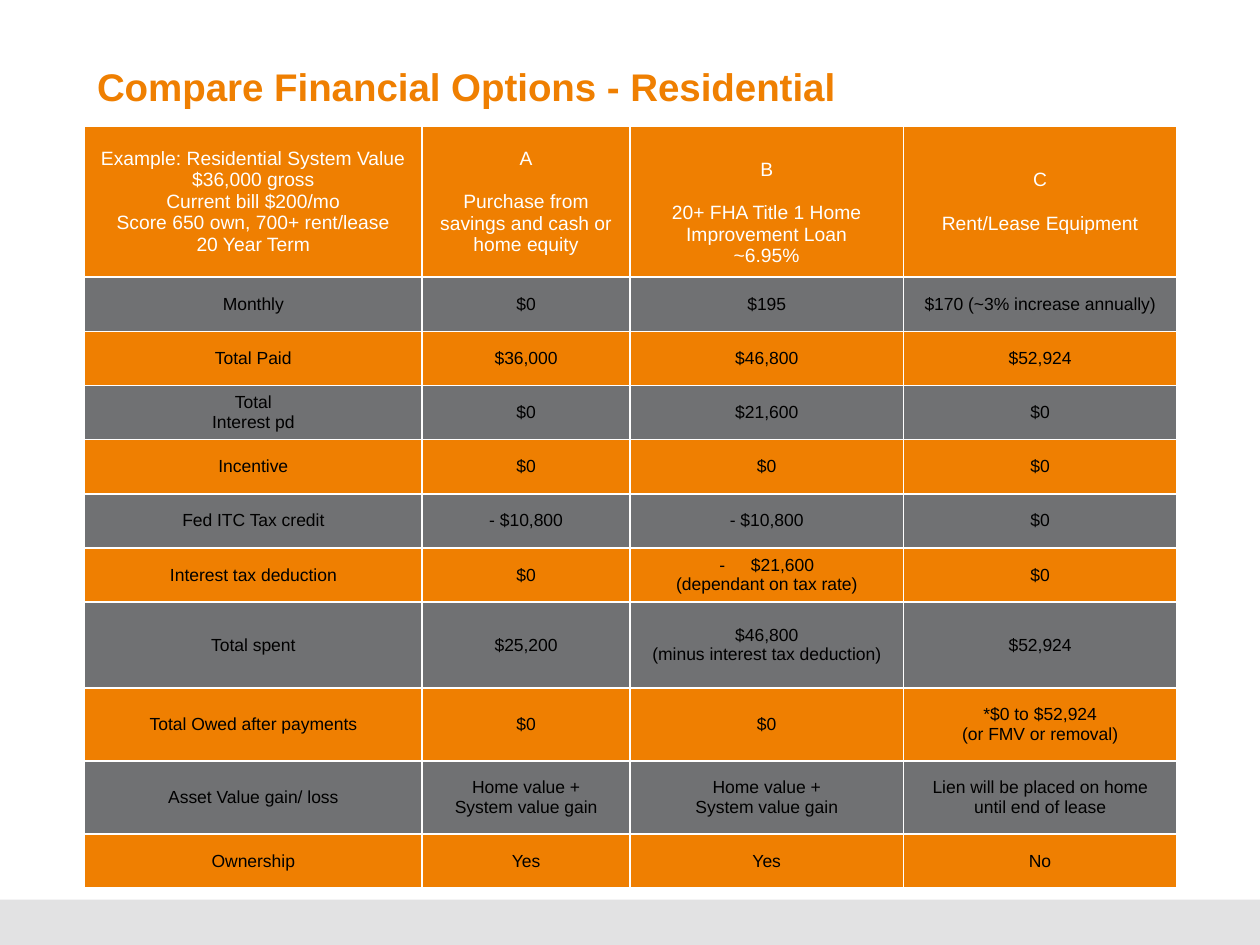
from dataclasses import dataclass

from lxml.etree import SubElement
from pptx import Presentation
from pptx.dml.color import RGBColor as Rgb
from pptx.enum.shapes import MSO_SHAPE as Preset
from pptx.enum.text import MSO_ANCHOR as Anchor, MSO_AUTO_SIZE as AutoSize, PP_ALIGN as Align
from pptx.oxml.ns import qn
from pptx.util import Inches, Pt


@dataclass(frozen=True)
class Theme:
    font: str = "Arial"
    orange: str = "EF7F01"
    gray: str = "707173"
    white: str = "FFFFFF"
    black: str = "000000"
    title_size: int = 22
    header_size: int = 11
    body_size: int = 10
    footer_opacity: int = 20
    border: int = 1


THEME = Theme()
LINE_GAP = 12.65  # one header line, in points

COLUMN_WIDTHS = [2.68, 1.65, 2.17, 2.17]
ROW_HEIGHTS = [1.2] + [0.43] * 6 + [0.68, 0.58, 0.58, 0.43]
OPTIONS = [
    ["Example: Residential System Value\n$36,000 gross\nCurrent bill $200/mo\n"
     "Score 650 own, 700+ rent/lease\n20 Year Term",
     "A\nPurchase from savings and cash or home equity",
     "B\n20+ FHA Title 1 Home Improvement Loan\n~6.95%",
     "C\nRent/Lease Equipment"],
    ["Monthly", "$0", "$195", "$170 (~3% increase annually)"],
    ["Total Paid", "$36,000", "$46,800", "$52,924"],
    ["Total\nInterest pd", "$0", "$21,600", "$0"],
    ["Incentive", "$0", "$0", "$0"],
    ["Fed ITC Tax credit", "- $10,800", "- $10,800", "$0"],
    ["Interest tax deduction", "$0", "$21,600\n(dependant on tax rate)", "$0"],
    ["Total spent", "$25,200", "$46,800\n(minus interest tax deduction)", "$52,924"],
    ["Total Owed after payments", "$0", "$0", "*$0 to $52,924\n(or FMV or removal)"],
    ["Asset Value gain/ loss", "Home value +\nSystem value gain",
     "Home value +\nSystem value gain", "Lien will be placed on home until end of lease"],
    ["Ownership", "Yes", "Yes", "No"],
]
DEDUCTION_CELL = (6, 2)
LOAN_HEADER_CELL = (0, 2)


def apply_format(target, values):
    for name, value in values.items():
        setattr(target, name, value)


def style_font(font, size, color, bold=False):
    apply_format(font, {"name": THEME.font, "size": Pt(size), "bold": bold})
    font.color.rgb = Rgb.from_string(color)


def add_footer(slide, left, top, width, height):
    band = slide.shapes.add_shape(Preset.RECTANGLE, left, top, width, height)
    band.shadow.inherit = False
    band.line.fill.background()
    band.fill.solid()
    band.fill.fore_color.rgb = Rgb.from_string(THEME.gray)
    tint = band.fill._xPr.find(qn("a:solidFill"))[0]
    SubElement(tint, qn("a:alpha"), val=str(THEME.footer_opacity * 1000))


def add_title(slide, left, top, width, height):
    title = slide.shapes.title
    apply_format(title, {"left": left, "top": top, "width": width, "height": height})
    frame = title.text_frame
    apply_format(frame, {"text": "Compare Financial Options - Residential",
                         "word_wrap": True, "auto_size": AutoSize.NONE,
                         "vertical_anchor": Anchor.TOP})
    heading = frame.paragraphs[0]
    heading.alignment = Align.LEFT
    style_font(heading.runs[0].font, THEME.title_size, THEME.orange, bold=True)


def add_borders(cell):
    properties = cell._tc.get_or_add_tcPr()
    for side in ("lnL", "lnR", "lnT", "lnB"):
        edge = SubElement(properties, qn(f"a:{side}"), w=str(Pt(THEME.border)))
        SubElement(SubElement(edge, qn("a:solidFill")), qn("a:srgbClr"), val=THEME.white)


def add_dash_bullet(paragraph):
    properties = paragraph._p.get_or_add_pPr()
    indent = Inches(0.25)
    for name, value in {"marL": indent, "indent": -indent}.items():
        properties.set(name, str(value))
    SubElement(properties, qn("a:buFont"), typeface=THEME.font)
    SubElement(properties, qn("a:buChar"), char="-")


def fill_cell(cell, text, row, column):
    is_header = row == 0
    add_borders(cell)
    cell.fill.solid()
    cell.fill.fore_color.rgb = Rgb.from_string(THEME.gray if row % 2 else THEME.orange)
    apply_format(cell, {"text": text, "vertical_anchor": Anchor.MIDDLE,
                        "margin_left": Inches(0.1), "margin_right": Inches(0.1),
                        "margin_top": Inches(0.05), "margin_bottom": Inches(0.05)})
    # The loan heading sits one line lower than its neighbours
    if (row, column) == LOAN_HEADER_CELL:
        cell.margin_top = Inches(0.05) + Pt(LINE_GAP)
    size, color = ((THEME.header_size, THEME.white) if is_header
                   else (THEME.body_size, THEME.black))
    for index, paragraph in enumerate(cell.text_frame.paragraphs):
        paragraph.alignment = Align.CENTER
        # Option letters stand apart from their descriptions
        if is_header and column > 0 and index == 1:
            paragraph.space_before = Pt(LINE_GAP)
        if (row, column) == DEDUCTION_CELL and index == 0:
            add_dash_bullet(paragraph)
        for run in paragraph.runs:
            style_font(run.font, size, color)


def add_options_table(slide, left, top, width, height):
    table = slide.shapes.add_table(len(OPTIONS), len(COLUMN_WIDTHS),
                                   left, top, width, height).table
    table.horz_banding = False
    for column, column_width in zip(table.columns, COLUMN_WIDTHS):
        column.width = Inches(column_width)
    for row, row_height in zip(table.rows, ROW_HEIGHTS):
        row.height = Inches(row_height)
    for r, texts in enumerate(OPTIONS):
        for c, text in enumerate(texts):
            fill_cell(table.cell(r, c), text, r, c)


def main():
    deck = Presentation()
    apply_format(deck, {"slide_width": Inches(10), "slide_height": Inches(7.5)})
    slide = deck.slides.add_slide(deck.slide_layouts[5])
    add_footer(slide, Inches(0), Inches(7.14), deck.slide_width, Inches(0.36))
    add_options_table(slide, Inches(0.67), Inches(1),
                      Inches(sum(COLUMN_WIDTHS)), Inches(sum(ROW_HEIGHTS)))
    add_title(slide, Inches(0.67), Inches(0.45), Inches(7.41), Inches(1.1))
    deck.save("out.pptx")


if __name__ == "__main__":
    main()
